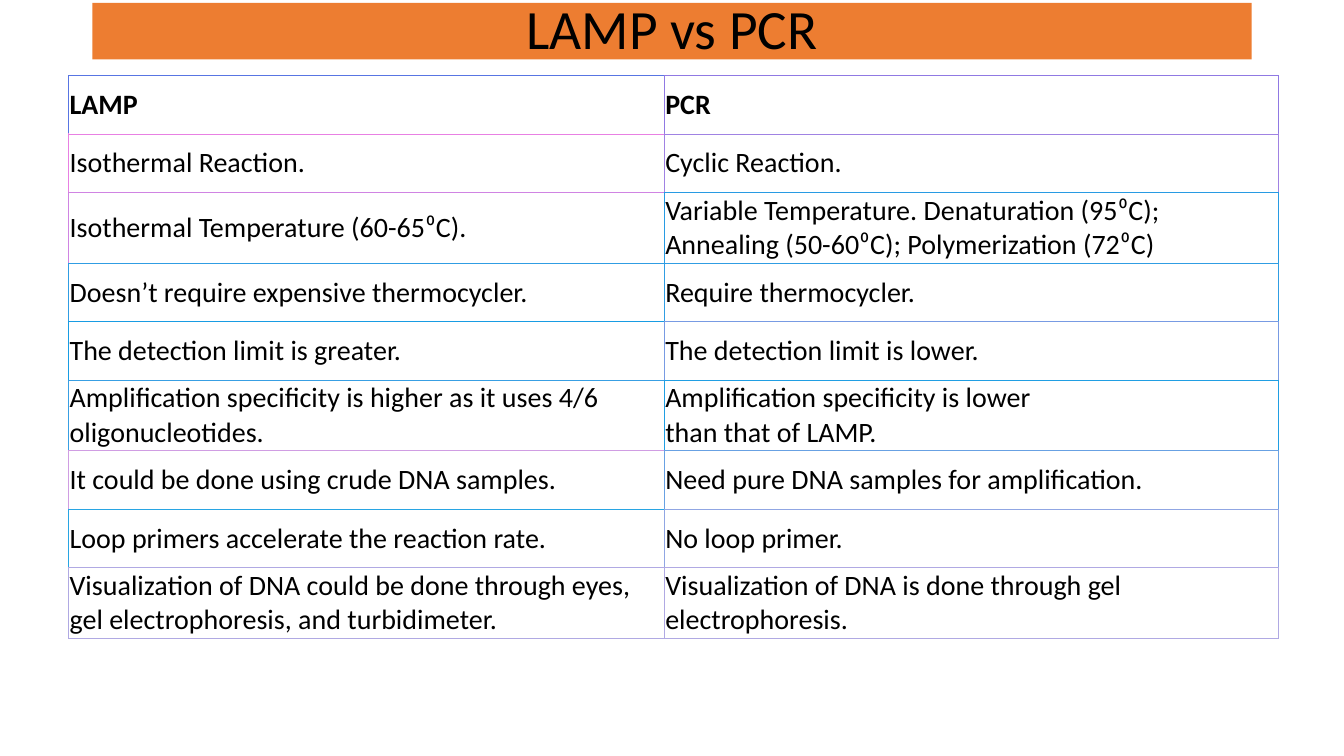
import dataclasses

import lxml.etree
import pptx
import pptx.dml.color
import pptx.enum.text
import pptx.oxml.ns
import pptx.util

Pt = pptx.util.Pt
Anchor = pptx.enum.text.MSO_ANCHOR


@dataclasses.dataclass(frozen=True)
class Theme:
    font: str = "Calibri"
    ink: str = "000000"
    paper: str = "FFFFFF"
    band: str = "ED7D31"
    head: float = 39.6
    body: float = 20
    line: float = 1
    thin: float = 0.6


@dataclasses.dataclass(frozen=True)
class Item:
    text: str
    edge: str


THEME = Theme()
COLS = (425.5, 438.5)
ROW = 41.8
INSET = 0.72

# Each row pairs LAMP with PCR; a line break starts a new paragraph
ROWS: list[tuple[Item, Item]] = [
    (Item("LAMP", "5875E3"), Item("PCR", "9079E3")),
    (Item("Isothermal Reaction.", "E880E3"), Item("Cyclic Reaction.", "A082E3")),
    (Item("Isothermal Temperature (60-65⁰C).", "D084E3"),
     Item("Variable Temperature. Denaturation (95⁰C); Annealing (50-60⁰C); "
          "Polymerization (72⁰C)", "289BE3")),
    (Item("Doesn’t require expensive thermocycler.", "309DE3"),
     Item("Require thermocycler.", "309DE3")),
    (Item("The detection limit is greater.", "189CE3"),
     Item("The detection limit is lower.", "789BE3")),
    (Item("Amplification specificity is higher as it uses 4/6 oligonucleotides.",
          "389FE3"),
     Item("Amplification specificity is lower\nthan that of LAMP.", "209EE3")),
    (Item("It could be done using crude DNA samples.", "D09DE3"),
     Item("Need pure DNA samples for amplification.", "68A1E3")),
    (Item("Loop primers accelerate the reaction rate.", "28A5E3"),
     Item("No loop primer.", "90A6E3")),
    (Item("Visualization of DNA could be done through eyes, gel electrophoresis, "
          "and turbidimeter.", "B0A9E3"),
     Item("Visualization of DNA is done through gel electrophoresis.", "B0A9E3")),
]


def paint(fill, color: str) -> None:
    fill.solid()
    fill.fore_color.rgb = pptx.dml.color.RGBColor.from_string(color)


def add_run(para, text: str, size: float, bold: bool = False) -> None:
    run = para.add_run()
    run.text = text
    run.font.name = THEME.font
    run.font.size = Pt(size)
    run.font.bold = bold
    run.font.color.rgb = pptx.dml.color.RGBColor.from_string(THEME.ink)


def set_edge(cell, side: int, color: str, width: float) -> None:
    """Insert one border; sides run left, right, top, bottom."""
    qn = pptx.oxml.ns.qn
    line = lxml.etree.Element(qn("a:ln" + "LRTB"[side]), w=str(int(Pt(width))))
    fill = lxml.etree.SubElement(line, qn("a:solidFill"))
    lxml.etree.SubElement(fill, qn("a:srgbClr"), val=color)
    cell._tc.get_or_add_tcPr().insert(side, line)


def add_title(slide) -> None:
    title = slide.shapes.title
    title.left, title.top = Pt(66), Pt(2)
    title.width, title.height = Pt(828), Pt(40.5)
    paint(title.fill, THEME.band)
    frame = title.text_frame
    frame.auto_size = pptx.enum.text.MSO_AUTO_SIZE.NONE
    frame.vertical_anchor = Anchor.MIDDLE
    para = frame.paragraphs[0]
    para.alignment = pptx.enum.text.PP_ALIGN.CENTER
    para.line_spacing = 0.9
    add_run(para, "LAMP vs PCR", THEME.head)


def fill_cell(cell, row: int, col: int) -> None:
    item = ROWS[row][col]
    cell.margin_left = cell.margin_right = Pt(INSET)
    cell.margin_top = cell.margin_bottom = Pt(INSET)
    cell.vertical_anchor = Anchor.MIDDLE
    paint(cell.fill, THEME.paper)
    frame = cell.text_frame
    for num, text in enumerate(item.text.split("\n")):
        para = frame.add_paragraph() if num else frame.paragraphs[0]
        add_run(para, text, THEME.body, bold=row == 0)

    # Shared borders take the color of the next cell; outer ones are thin
    last_col = col == len(COLS) - 1
    last_row = row == len(ROWS) - 1
    right = item if last_col else ROWS[row][col + 1]
    below = item if last_row else ROWS[row + 1][col]
    edges = (
        (item.edge, THEME.line),
        (right.edge, THEME.thin if last_col else THEME.line),
        (item.edge, THEME.line),
        (below.edge, THEME.thin if last_row else THEME.line),
    )
    for side, (color, width) in enumerate(edges):
        set_edge(cell, side, color, width)


def add_grid(slide) -> None:
    table = slide.shapes.add_table(
        len(ROWS), len(COLS), Pt(49), Pt(54), Pt(sum(COLS)), Pt(ROW * len(ROWS))
    ).table
    table.first_row = table.horz_banding = False
    for col, width in enumerate(COLS):
        table.columns[col].width = Pt(width)
    for row in range(len(ROWS)):
        table.rows[row].height = Pt(ROW)
        for col in range(len(COLS)):
            fill_cell(table.cell(row, col), row, col)


def main() -> None:
    deck = pptx.Presentation()
    deck.slide_width, deck.slide_height = Pt(960), Pt(540)
    slide = deck.slides.add_slide(deck.slide_layouts.get_by_name("Title Only"))
    paint(slide.background.fill, THEME.paper)
    add_title(slide)
    add_grid(slide)
    deck.save("out.pptx")


if __name__ == "__main__":
    main()
